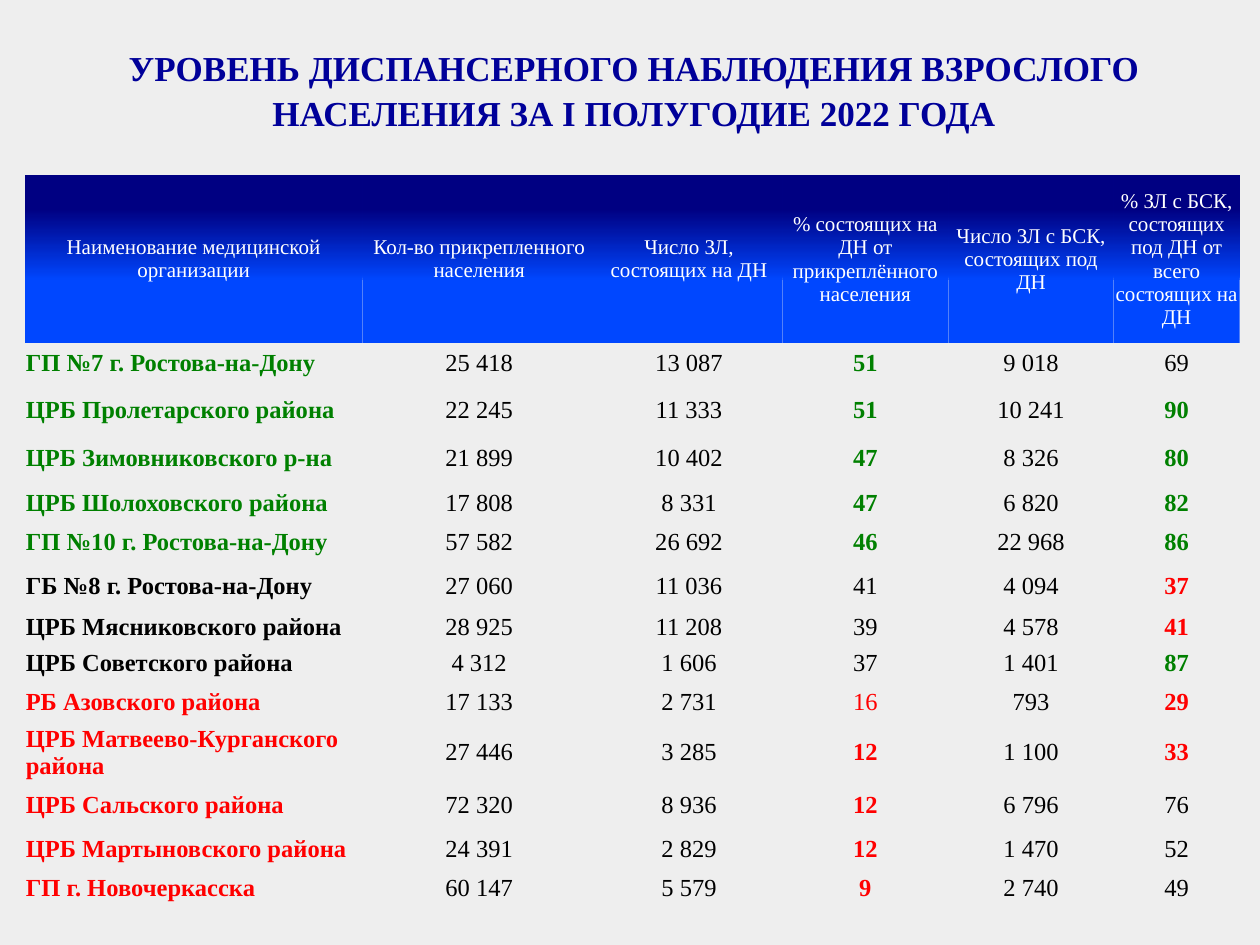
from lxml import etree
from pptx import Presentation
from pptx.dml.color import RGBColor
from pptx.enum.text import MSO_ANCHOR as Anchor, PP_ALIGN as Align
from pptx.util import Cm, Pt

FONT = "Times New Roman"
GREEN, RED, BLACK, WHITE = "008000", "FF0000", "000000", "FFFFFF"
NO_TABLE_STYLE = "{2D5ABB26-0587-4C30-8999-92F81FD0307C}"

TITLE = "УРОВЕНЬ ДИСПАНСЕРНОГО НАБЛЮДЕНИЯ ВЗРОСЛОГО НАСЕЛЕНИЯ ЗА I ПОЛУГОДИЕ 2022 ГОДА"
HEADERS = [
    "Наименование медицинской организации",
    "Кол-во прикрепленного населения",
    "Число ЗЛ, состоящих на ДН",
    "% состоящих на ДН от прикреплённого населения",
    "Число ЗЛ с БСК, состоящих под ДН",
    "% ЗЛ с БСК, состоящих под ДН от всего состоящих на ДН",
]
COLUMN_WIDTHS = [6.81, 4.7, 3.76, 3.35, 3.33, 2.54]
HEADER_HEIGHT = 3.38
# Row height, organisation, attached, observed, % observed, BSK, % BSK
ROWS = [
    (0.81, "ГП №7 г. Ростова-на-Дону", "25 418", "13 087", 51, "9 018", 69),
    (1.07, "ЦРБ Пролетарского района", "22 245", "11 333", 51, "10 241", 90),
    (0.89, "ЦРБ Зимовниковского р-на", "21 899", "10 402", 47, "8 326", 80),
    (0.89, "ЦРБ Шолоховского района", "17 808", "8 331", 47, "6 820", 82),
    (0.71, "ГП №10 г. Ростова-на-Дону", "57 582", "26 692", 46, "22 968", 86),
    (1.04, "ГБ №8 г. Ростова-на-Дону", "27 060", "11 036", 41, "4 094", 37),
    (0.64, "ЦРБ Мясниковского района", "28 925", "11 208", 39, "4 578", 41),
    (0.79, "ЦРБ Советского района", "4 312", "1 606", 37, "1 401", 87),
    (0.79, "РБ Азовского района", "17 133", "2 731", 16, "793", 29),
    (1.24, "ЦРБ Матвеево-Курганского района", "27 446", "3 285", 12, "1 100", 33),
    (0.89, "ЦРБ Сальского района", "72 320", "8 936", 12, "6 796", 76),
    (0.89, "ЦРБ Мартыновского района", "24 391", "2 829", 12, "1 470", 52),
    (0.69, "ГП г. Новочеркасска", "60 147", "5 579", 9, "2 740", 49),
]


def rgb(value):
    return RGBColor.from_string(value)


def rate(percent, low, high):
    """Colour of a percentage: green from high up, red below low."""
    return GREEN if percent >= high else RED if percent < low else BLACK


def write(text_frame, text, size, color, bold=False, align=Align.CENTER):
    text_frame.text = text
    paragraph = text_frame.paragraphs[0]
    paragraph.alignment = align
    font = paragraph.runs[0].font
    font.name, font.size, font.bold = FONT, Pt(size), bold
    font.color.rgb = rgb(color)


def fill_header(cell):
    cell.fill.gradient()
    cell.fill.gradient_angle = 90
    stops = [(0.37, "0047FF"), (0.8, "000082")]
    for stop, (position, color) in zip(cell.fill.gradient_stops, stops):
        stop.position = position
        stop.color.rgb = rgb(color)


def set_margins(cell, margin):
    cell.margin_left = cell.margin_right = cell.margin_top = Cm(margin)
    cell.margin_bottom = 0
    cell.vertical_anchor = Anchor.MIDDLE


def add_title(slide, left, top, width, height):
    text_frame = slide.shapes.add_textbox(Cm(left), Cm(top), Cm(width), Cm(height)).text_frame
    text_frame.word_wrap = True
    write(text_frame, TITLE, 20, "000099", bold=True)
    text_frame.paragraphs[0].line_spacing = 1.08


def add_observation_table(slide, left, top):
    heights = [HEADER_HEIGHT] + [row[0] for row in ROWS]
    frame = slide.shapes.add_table(len(heights), len(HEADERS), Cm(left), Cm(top),
                                   Cm(sum(COLUMN_WIDTHS)), Cm(sum(heights)))
    table = frame.table
    properties = table._tbl.tblPr
    for style in properties:
        properties.remove(style)
    style = etree.SubElement(properties, properties.tag.replace("tblPr", "tableStyleId"))
    style.text = NO_TABLE_STYLE

    for column, width in zip(table.columns, COLUMN_WIDTHS):
        column.width = Cm(width)
    for table_row, height in zip(table.rows, heights):
        table_row.height = Cm(height)

    # Header row
    for index, header in enumerate(HEADERS):
        cell = table.cell(0, index)
        set_margins(cell, 0 if index < 3 else 0.02)
        fill_header(cell)
        write(cell.text_frame, header, 12, WHITE)

    # Organisations, coloured by their rates
    for row_index, (_, *values) in enumerate(ROWS, start=1):
        observed_color = rate(values[3], 20, 45)
        colors = {0: observed_color, 3: observed_color, 5: rate(values[5], 45, 80)}
        for index, value in enumerate(values):
            color = colors.get(index, BLACK)
            # The rate of 16 % is the only coloured one in regular weight
            bold = index == 0 or (color != BLACK and value != 16)
            cell = table.cell(row_index, index)
            set_margins(cell, 0.02)
            cell.fill.background()
            write(cell.text_frame, str(value), 14, color, bold,
                  Align.LEFT if index == 0 else Align.CENTER)


def main():
    presentation = Presentation()
    presentation.slide_width, presentation.slide_height = Cm(25.4), Cm(19.05)
    slide = presentation.slides.add_slide(presentation.slide_layouts[6])
    slide.background.fill.solid()
    slide.background.fill.fore_color.rgb = rgb("EEEEEE")
    add_title(slide, 0.5, 0.74, 24.56, 2.82)
    add_observation_table(slide, 0.5, 3.53)
    presentation.save("out.pptx")


if __name__ == "__main__":
    main()
